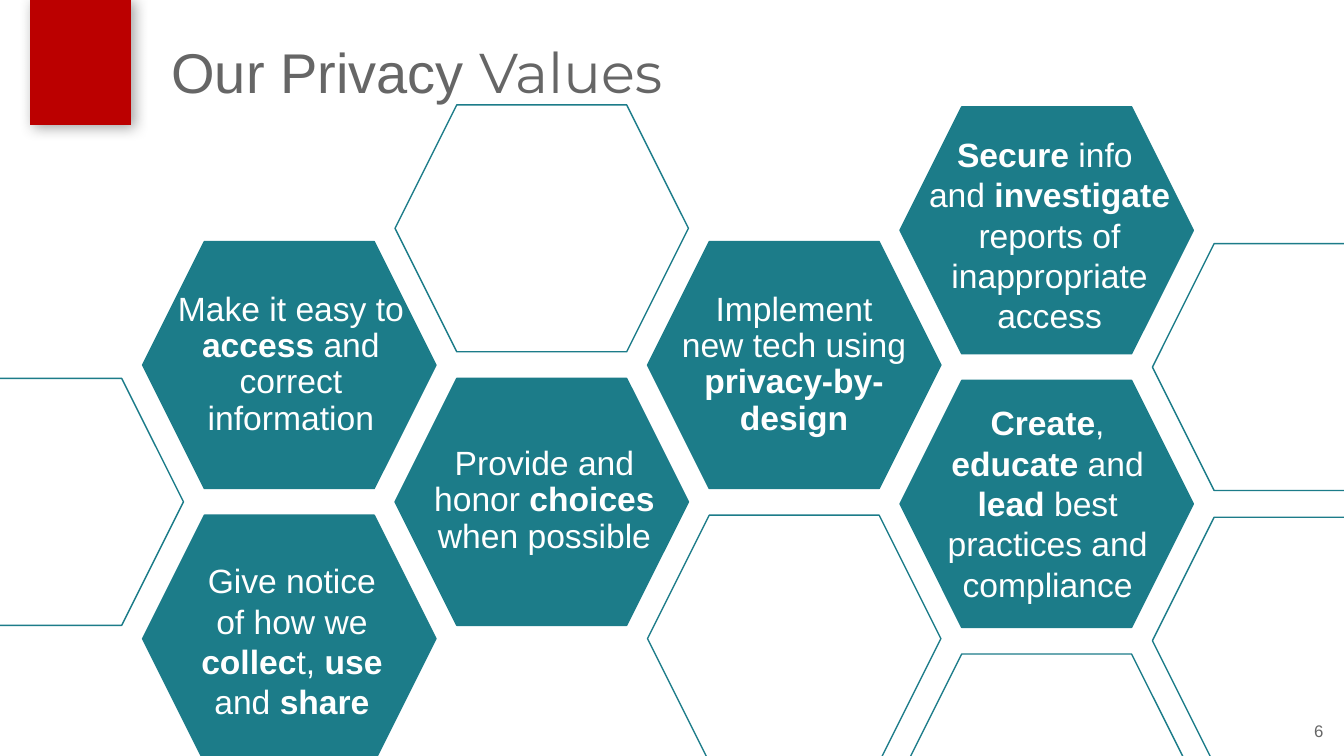
"""Build the privacy values slide: a honeycomb of filled and open hexagons."""
from lxml import etree
from pptx import Presentation
from pptx.dml.color import RGBColor
from pptx.enum.shapes import MSO_SHAPE
from pptx.enum.text import MSO_ANCHOR, PP_ALIGN
from pptx.oxml import parse_xml
from pptx.oxml.ns import nsdecls
from pptx.util import Inches, Pt

COLORS = {"red": "BB0000", "teal": "1C7C89", "gray": "666666", "white": "FFFFFF"}


def color(name):
    return RGBColor.from_string(COLORS[name])


def label(left, top, width, height, text, size, tint, space=1.0):
    """Add a centred text box, with bold parts between asterisks."""
    box = slide.shapes.add_textbox(*map(Inches, (left, top, width, height)))
    frame = box.text_frame
    frame.word_wrap = True
    para = frame.paragraphs[0]
    para.alignment = PP_ALIGN.CENTER
    para.line_spacing = space
    para.font.name = "Arial"
    para.font.size = Pt(size)
    para.font.color.rgb = color(tint)
    for part, words in enumerate(text.split("*")):
        for row, line in enumerate(words.split("\n")):
            if row:
                para.add_line_break()
            if line:
                run = para.add_run()
                run.text = line
                if part % 2:
                    run.font.bold = True
    return frame


deck = Presentation()
deck.slide_width = Inches(13.33)
deck.slide_height = Inches(7.5)
slide = deck.slides.add_slide(deck.slide_layouts[5])

flag = slide.shapes.add_shape(
    MSO_SHAPE.RECTANGLE, Inches(0.3), Inches(-0.01), Inches(1), Inches(1.25))
flag.fill.solid()
flag.fill.fore_color.rgb = color("red")
flag.line.fill.background()
flag.shadow.inherit = False
glow = flag._element.spPr.find("{*}effectLst")
glow.append(parse_xml(
    f'<a:outerShdw {nsdecls("a")} blurRad="{Pt(10)}" dist="{Pt(3)}" '
    f'dir="{30 * 60000}" algn="tl" rotWithShape="0">'
    f'<a:srgbClr val="{COLORS["gray"]}"><a:alpha val="60000"/></a:srgbClr>'
    '</a:outerShdw>'))

# (column, half-row, filled)
CELLS = [
    (0, 2, False), (1, 1, True), (1, 3, True), (2, 0, False), (2, 2, True),
    (3, 1, True), (3, 3, False), (4, 0, True), (4, 2, True), (4, 4, False),
    (5, 1, False), (5, 3, False),
]
for col, row, full in CELLS:
    drop = 0.02 if col > 3 else 0
    cell = slide.shapes.add_shape(
        MSO_SHAPE.HEXAGON, Inches(-1.09 + 2.504 * col),
        Inches(1.04 + 1.357 * row + drop), Inches(2.91), Inches(2.45))
    cell.shadow.inherit = False
    cell.line.color.rgb = color("teal")
    cell.line.width = Pt(1)
    if full:
        cell.fill.solid()
        cell.fill.fore_color.rgb = color("teal")
    else:
        cell.fill.background()

VALUES = [
    (1.85, 5.51, 2.09, 1.72, "Give notice of how we *collec*t, *use* and *share*", 1.0),
    (8.98, 1.28, 2.86, 2.12,
     "*Secure* info \nand *investigate* reports of inappropriate access", 1.0),
    (9.29, 3.94, 2.2, 2.12,
     "*Create*, *educate* and *lead *best practices and compliance", 1.0),
    (4.2, 4.38, 2.4, 1.19, "Provide and honor *choices *when possible", 0.9),
    (6.61, 2.85, 2.53, 1.56, "Implement\nnew tech using *privacy-by-design*", 0.9),
    (1.62, 2.85, 2.53, 1.56, "Make it easy to *access *and correct information", 0.9),
]
for left, top, width, height, text, space in VALUES:
    label(left, top, width, height, text, 24, "white", space)

title = slide.shapes.title
title.left, title.top = Inches(0.8), Inches(0)
title.width, title.height = Inches(12.5), Inches(1.5)
frame = title.text_frame
frame.vertical_anchor = MSO_ANCHOR.MIDDLE
frame.margin_left = frame.margin_right = Inches(0.9)
frame.margin_top = frame.margin_bottom = Inches(0.2)
para = frame.paragraphs[0]
para.alignment = PP_ALIGN.LEFT
para.line_spacing = 0.9
para.font.size = Pt(40)
para.font.color.rgb = color("gray")
for words, face in (("Our Privacy ", "Arial"), ("Values", "Montserrat")):
    run = para.add_run()
    run.text = words
    run.font.name = face

page = label(12.83, 7, 0.5, 0.5, "6", 12, "gray")
page.vertical_anchor = MSO_ANCHOR.MIDDLE

deck.save("out.pptx")
